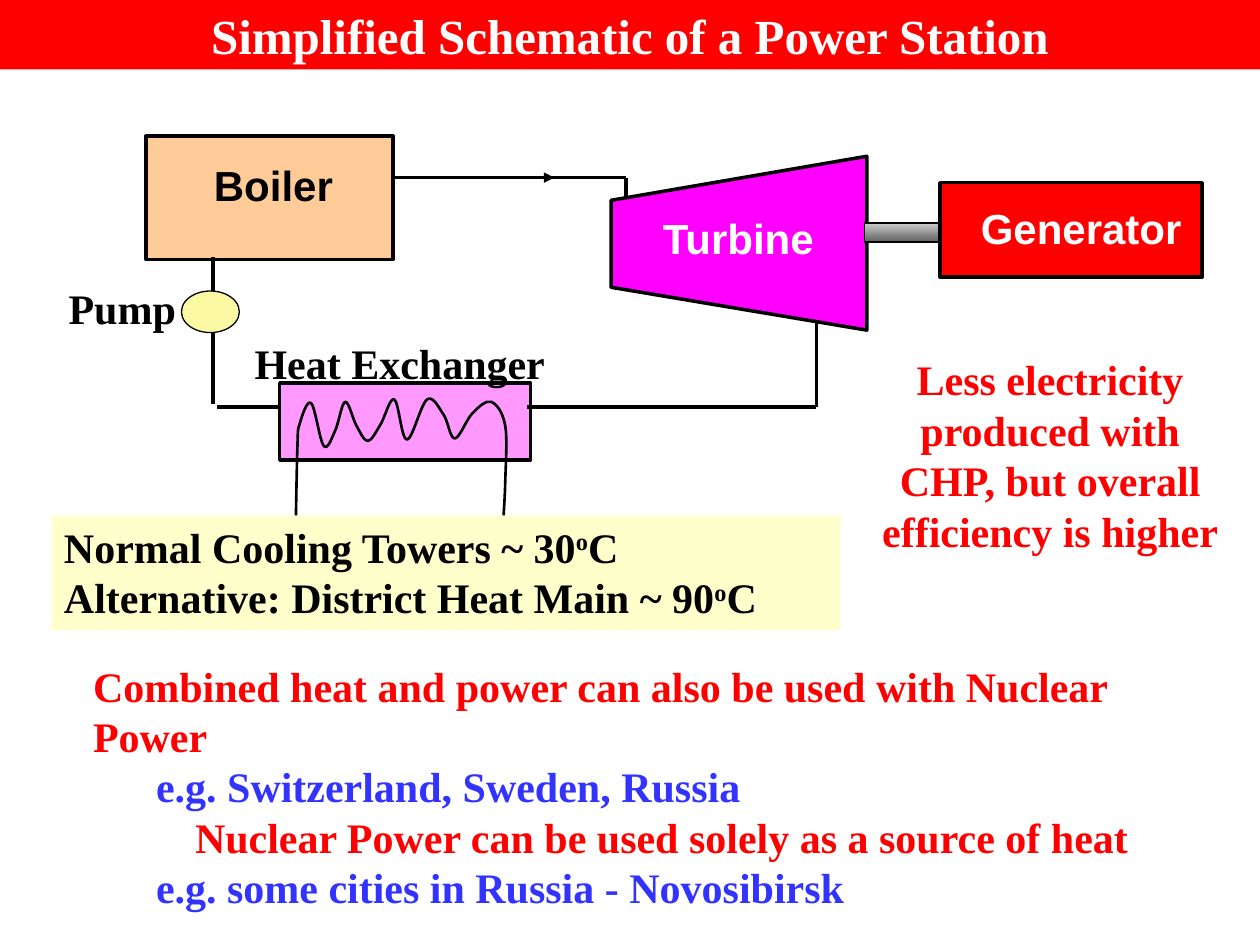
from dataclasses import dataclass
from lxml.etree import SubElement
from pptx import Presentation
from pptx.dml.color import RGBColor
from pptx.enum.shapes import MSO_CONNECTOR, MSO_SHAPE
from pptx.enum.text import MSO_ANCHOR, PP_ALIGN
from pptx.oxml.ns import qn
from pptx.util import Inches, Pt


@dataclass(frozen=True)
class Theme:
    black: str = "000000"
    white: str = "FFFFFF"
    red: str = "FF0000"
    blue: str = "3333FF"
    peach: str = "FFCC99"
    pink: str = "FF99FF"
    magenta: str = "FF00FF"
    yellow: str = "FBF9A3"
    cream: str = "FFFFCC"
    steel: tuple = ("CFCFCF", "606060")
    serif: str = "Times New Roman"
    sans: str = "Arial"
    head: int = 28
    body: int = 24
    thin: float = 0.75
    coil: float = 1.5
    thick: float = 2


COLS, ROWS = 100, 75
LEFT, MID = PP_ALIGN.LEFT, PP_ALIGN.CENTER


class Board:
    """Draws on one slide; all lengths are columns and rows of the grid."""

    def __init__(self, deck, theme):
        self.theme = theme
        self.col = deck.slide_width / COLS
        self.row = deck.slide_height / ROWS
        self.slide = deck.slides.add_slide(deck.slide_layouts[6])
        self.shapes = self.slide.shapes

    def place(self, x, y):
        return round(x * self.col), round(y * self.row)

    def paint(self, shape, fill, width):
        shape.shadow.inherit = False
        if fill is None:
            shape.fill.background()
        elif isinstance(fill, tuple):
            shape.fill.gradient()
            shape.fill.gradient_angle = 270
            for stop, tone in zip(shape.fill.gradient_stops, fill):
                stop.color.rgb = RGBColor.from_string(tone)
        else:
            shape.fill.solid()
            shape.fill.fore_color.rgb = RGBColor.from_string(fill)
        if width:
            shape.line.color.rgb = RGBColor.from_string(self.theme.black)
            shape.line.width = Pt(width)
        else:
            shape.line.fill.background()
        return shape

    def block(self, x, y, w, h, fill, width=None, kind=MSO_SHAPE.RECTANGLE):
        shape = self.shapes.add_shape(kind, *self.place(x, y), *self.place(w, h))
        return self.paint(shape, fill, width)

    def style(self, par, color, font=None, size=None, align=LEFT):
        par.alignment = align
        for run in par.runs:
            run.font.name = font or self.theme.serif
            run.font.size = Pt(size or self.theme.body)
            run.font.bold = True
            run.font.color.rgb = RGBColor.from_string(color)

    def text(self, x, y, w, h, words, color, font=None, align=MID, inset=0.1):
        frame = self.shapes.add_textbox(*self.place(x, y), *self.place(w, h)).text_frame
        frame.word_wrap = True
        frame.margin_left = frame.margin_right = Inches(inset)
        frame.margin_top = frame.margin_bottom = Inches(inset / 2)
        frame.text = words
        self.style(frame.paragraphs[0], color, font, align=align)
        return frame

    def pipe(self, *points, arrow=False):
        for start, end in zip(points, points[1:]):
            line = self.shapes.add_connector(
                MSO_CONNECTOR.STRAIGHT, *self.place(*start), *self.place(*end))
            line.line.color.rgb = RGBColor.from_string(self.theme.black)
            line.line.width = Pt(self.theme.thick)
            if arrow:
                SubElement(line.line._get_or_add_ln(), qn("a:tailEnd"), type="triangle")
            SubElement(line._element.spPr, qn("a:effectLst"))

    def form(self, points, fill, width, close=True):
        spots = [self.place(*point) for point in points]
        pen = self.shapes.build_freeform(*spots[0])
        pen.add_line_segments(spots[1:], close=close)
        return self.paint(pen.convert_to_shape(), fill, width)

    def curve(self, points, width):
        """Bend an open form into a smooth curve through its points."""
        shape = self.form(points, None, width, close=False)
        path = next(shape._element.iter(qn("a:path")))
        spots = [(int(pt.get("x")), int(pt.get("y"))) for pt in path.iter(qn("a:pt"))]
        ends = [spots[0], *spots, spots[-1]]
        for leg in list(path)[1:]:
            path.remove(leg)
        for before, start, end, after in zip(ends, ends[1:], ends[2:], ends[3:]):
            leg = SubElement(path, qn("a:cubicBezTo"))
            first = [s + (e - b) / 6 for b, s, e in zip(before, start, end)]
            second = [e - (a - s) / 6 for s, e, a in zip(start, end, after)]
            for x, y in (first, second, end):
                SubElement(leg, qn("a:pt"), x=str(round(x)), y=str(round(y)))


def main():
    deck = Presentation()
    deck.slide_width, deck.slide_height = Inches(10), Inches(7.5)
    t = Theme()
    board = Board(deck, t)

    # Title bar
    bar = board.block(0, 0, COLS, 5.5, t.red).text_frame
    bar.text = "Simplified Schematic of a Power Station"
    bar.vertical_anchor = MSO_ANCHOR.MIDDLE
    board.style(bar.paragraphs[0], t.white, size=t.head, align=MID)

    # Boiler
    board.block(11.6, 10.8, 19.6, 9.8, t.peach, t.thick)
    board.text(12.8, 12.2, 17.8, 5, "Boiler", t.black, t.sans)

    # Heat exchanger with its coil
    board.block(22.2, 30.4, 19.9, 6.1, t.pink, t.thick)
    coil = [(23.4, 46.3), (23.6, 35.8), (23.8, 33.6), (24.7, 32), (25.7, 35.4),
            (26.6, 34.2), (27.4, 31.9), (28.3, 33.8), (29.2, 35), (30.2, 33.7),
            (31.3, 31.7), (32.3, 34.9), (33.9, 31.7), (35.2, 32.9), (36.1, 34.8),
            (37.5, 32.8), (39, 31.9), (40.1, 33.8), (40.1, 38.3), (39.9, 42.4),
            (39.9, 45.3)]
    board.curve(coil, t.coil)
    board.pipe((64.8, 25.4), (64.8, 32.3), (41.8, 32.3))
    board.text(20.2, 26.8, 34.2, 4, "Heat Exchanger", t.black, align=LEFT, inset=0)

    # Turbine and steam pipe
    board.form([(68.8, 12.4), (48.5, 15.9), (48.5, 22.8), (68.8, 26.2)],
               t.magenta, t.thick)
    board.pipe((31.1, 14.1), (49.7, 14.1), (49.7, 15.8))
    board.pipe((36.9, 14.1), (44, 14.1), arrow=True)
    board.text(49.7, 16.4, 17.8, 5, "Turbine", t.white, t.sans)

    # Shaft and generator
    board.block(68.6, 17.7, 7.7, 1.5, t.steel, t.thin)
    board.block(74.6, 14.5, 20.8, 7.5, t.red, t.thick)
    board.text(76.2, 15.6, 19.2, 5, "Generator", t.white, t.sans)

    # Return pipe and pump
    board.pipe((22.1, 32.3), (17.2, 32.3))
    board.pipe((16.9, 32.1), (16.9, 20.4))
    board.block(14.4, 23.1, 4.6, 3.3, t.yellow, t.thin, MSO_SHAPE.OVAL)
    board.text(4.1, 21.9, 11.2, 5, "Pump", t.black)

    # Cooling choices, with raised degree signs
    cool = board.block(4.1, 40.9, 62.6, 9.1, t.cream).text_frame
    cool.vertical_anchor = MSO_ANCHOR.TOP
    par = cool.paragraphs[0]
    for part in ("Normal Cooling Towers ~ 30", "o",
                 "C Alternative: District Heat Main ~ 90", "o", "C"):
        run = par.add_run()
        run.text = part
        if part == "o":
            run.font._element.set("baseline", "30000")
    board.style(par, t.black)

    # Remarks
    board.text(68.8, 27.6, 29.1, 17.2, "Less electricity produced with CHP, "
               "but overall efficiency is higher", t.red)
    notes = board.text(6.4, 51.9, 88.7, 21.2, "Combined heat and power can also "
                       "be used with Nuclear Power", t.red, align=LEFT)
    for words, color, hang in (
            ("e.g. Switzerland, Sweden, Russia", t.blue, -0.31),
            ("Nuclear Power can be used solely as a source of heat", t.red, 0),
            ("e.g. some cities in Russia - Novosibirsk", t.blue, -0.31)):
        par = notes.add_paragraph()
        par.text = words
        props = par._p.get_or_add_pPr()
        props.set("marL", str(Inches(0.81)))
        props.set("indent", str(Inches(hang)))
        board.style(par, color)

    deck.save("out.pptx")


if __name__ == "__main__":
    main()
